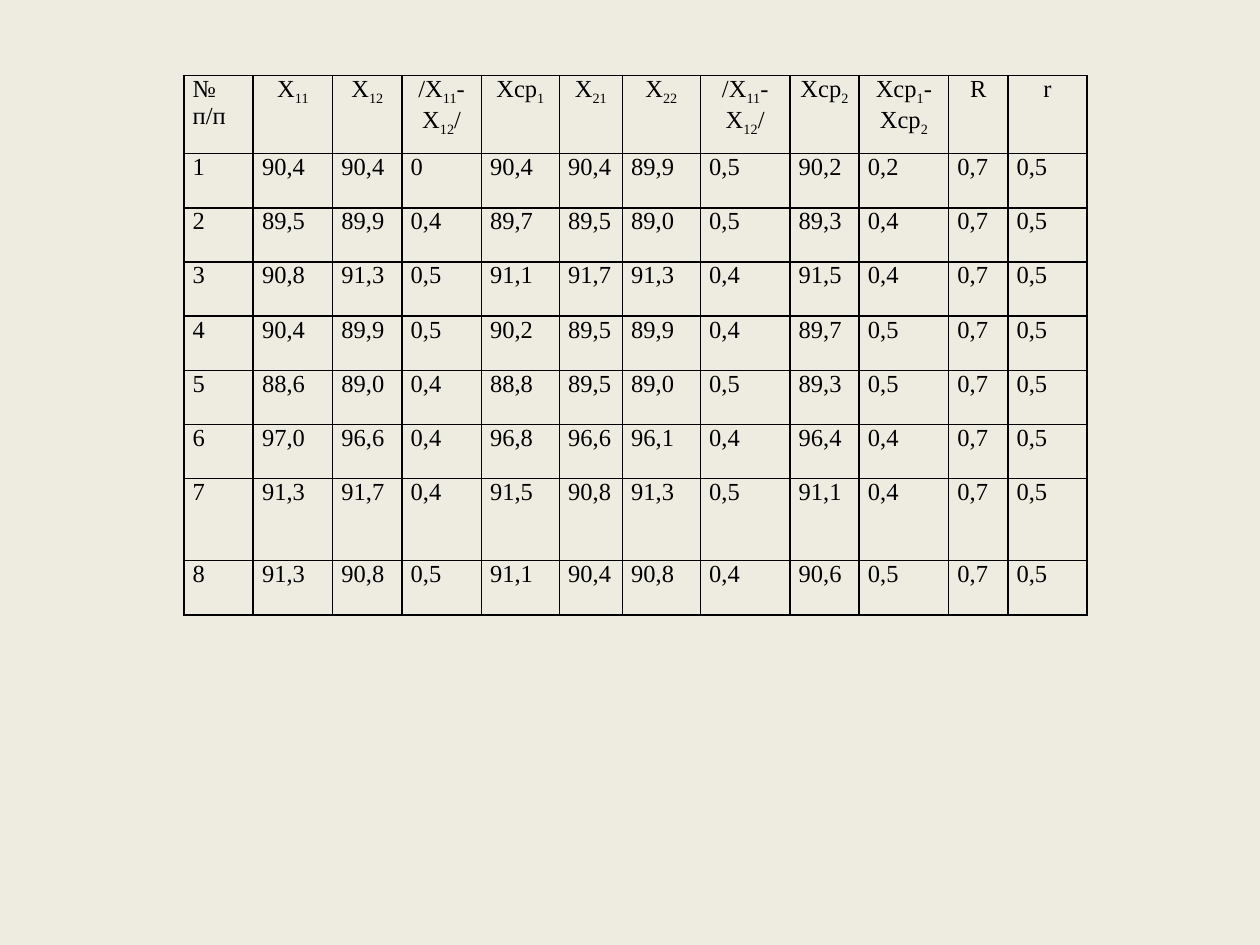
from typing import NamedTuple

from lxml import etree
from pptx import Presentation
from pptx import util as u
from pptx.dml import color
from pptx.enum import text
from pptx.oxml import ns

COLORS = {"background": "EEECE1", "ink": "000000"}
FONT = "Times New Roman"
SUBSCRIPT = "-25000"
COLUMN_WIDTHS = [0.55, 0.63, 0.55, 0.63, 0.62, 0.5, 0.62, 0.71, 0.55, 0.71, 0.47, 0.63]
HEADER_HEIGHT = 0.62


class Measurement(NamedTuple):
    values: str
    height: float = 0.43


# "|" switches between baseline and subscript text.
HEADERS = [
    "№ п/п", "Х|11", "Х|12", "/Х|11|-Х|12|/", "Хср|1", "Х|21", "Х|22",
    "/Х|11|-Х|12|/", "Хср|2", "Хср|1|- Хср|2", "R", "r",
]
MEASUREMENTS = [
    Measurement("90,4 90,4 0 90,4 90,4 89,9 0,5 90,2 0,2 0,7 0,5"),
    Measurement("89,5 89,9 0,4 89,7 89,5 89,0 0,5 89,3 0,4 0,7 0,5"),
    Measurement("90,8 91,3 0,5 91,1 91,7 91,3 0,4 91,5 0,4 0,7 0,5"),
    Measurement("90,4 89,9 0,5 90,2 89,5 89,9 0,4 89,7 0,5 0,7 0,5"),
    Measurement("88,6 89,0 0,4 88,8 89,5 89,0 0,5 89,3 0,5 0,7 0,5"),
    Measurement("97,0 96,6 0,4 96,8 96,6 96,1 0,4 96,4 0,4 0,7 0,5"),
    Measurement("91,3 91,7 0,4 91,5 90,8 91,3 0,5 91,1 0,4 0,7 0,5", 0.65),
    Measurement("91,3 90,8 0,5 91,1 90,4 90,8 0,4 90,6 0,5 0,7 0,5"),
]


def add_borders(cell) -> None:
    properties = cell._tc.get_or_add_tcPr()
    for side in ("a:lnL", "a:lnR", "a:lnT", "a:lnB"):
        line = etree.SubElement(properties, ns.qn(side), w=str(u.Pt(1)))
        fill = etree.SubElement(line, ns.qn("a:solidFill"))
        etree.SubElement(fill, ns.qn("a:srgbClr"), val=COLORS["ink"])


def fill_cell(cell, content: str, centered: bool) -> None:
    add_borders(cell)
    cell.fill.background()
    cell.margin_left = cell.margin_right = u.Inches(0.07)
    cell.margin_top = cell.margin_bottom = 0
    paragraph = cell.text_frame.paragraphs[0]
    paragraph.alignment = text.PP_ALIGN.CENTER if centered else text.PP_ALIGN.LEFT
    paragraph.font.name = FONT
    paragraph.font.size = u.Pt(14)
    paragraph.font.color.rgb = color.RGBColor.from_string(COLORS["ink"])
    for index, part in enumerate(content.split("|")):
        run = paragraph.add_run()
        run.text = part
        if index % 2:
            run._r.get_or_add_rPr().set("baseline", SUBSCRIPT)


def add_measurement_table(slide) -> None:
    rows = [HEADERS]
    for number, measurement in enumerate(MEASUREMENTS, start=1):
        rows.append([str(number), *measurement.values.split()])
    heights = [HEADER_HEIGHT, *(measurement.height for measurement in MEASUREMENTS)]
    table = slide.shapes.add_table(
        len(rows), len(HEADERS), u.Inches(1.46), u.Inches(0.6),
        u.Inches(sum(COLUMN_WIDTHS)), u.Inches(sum(heights)),
    ).table
    table.first_row = table.horz_banding = False
    for column, width in zip(table.columns, COLUMN_WIDTHS):
        column.width = u.Inches(width)
    for row_index, (contents, height) in enumerate(zip(rows, heights)):
        table.rows[row_index].height = u.Inches(height)
        for column_index, content in enumerate(contents):
            centered = row_index == 0 and column_index > 0
            fill_cell(table.cell(row_index, column_index), content, centered)


def main() -> None:
    presentation = Presentation()
    presentation.slide_width = u.Inches(10)
    presentation.slide_height = u.Inches(7.5)
    slide = presentation.slides.add_slide(presentation.slide_layouts[6])
    background = slide.background.fill
    background.solid()
    background.fore_color.rgb = color.RGBColor.from_string(COLORS["background"])
    add_measurement_table(slide)
    presentation.save("out.pptx")


if __name__ == "__main__":
    main()
